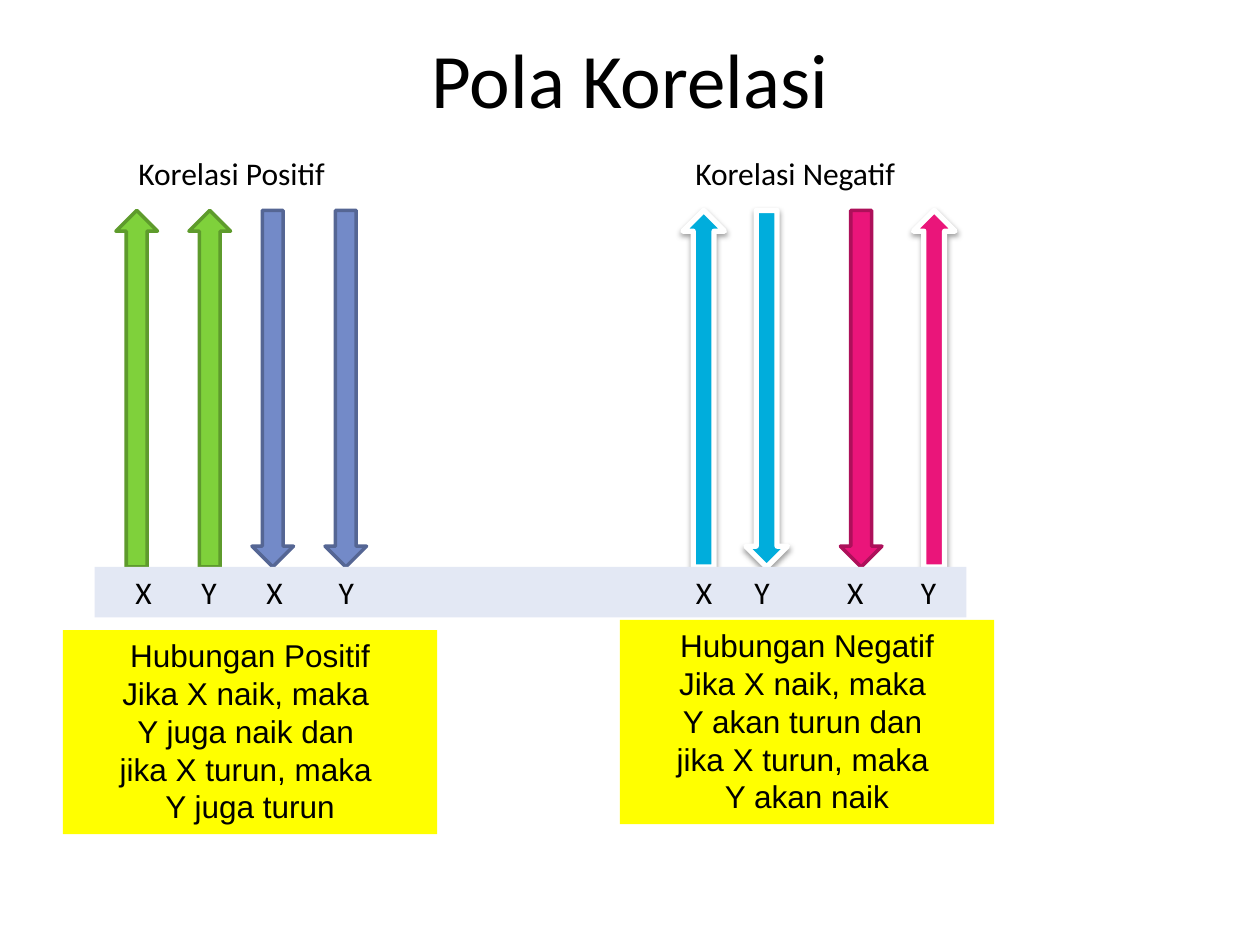
from dataclasses import dataclass

from lxml.etree import SubElement
from pptx import Presentation
from pptx.dml.color import RGBColor
from pptx.enum.shapes import MSO_SHAPE
from pptx.enum.text import MSO_ANCHOR, MSO_AUTO_SIZE, PP_ALIGN
from pptx.oxml.ns import qn
from pptx.util import Inches, Pt


@dataclass(frozen=True)
class Theme:
    heading_font: str = "Calibri"
    note_font: str = "Arial"
    title_size: int = 44
    text_size: int = 18
    ink: str = "000000"
    white: str = "FFFFFF"
    green: str = "7FD13B"
    green_edge: str = "5E9B2C"
    blue: str = "738AC8"
    blue_edge: str = "556694"
    cyan: str = "00ADDC"
    pink: str = "EA157A"
    pink_edge: str = "AD105A"
    band: str = "E3E8F4"
    note: str = "FFFF00"


class SlideBuilder:
    def __init__(self, page, theme):
        self.page = page
        self.theme = theme

    def format(self, para, font, size, align):
        para.alignment = align
        para.font.name = font
        para.font.size = Pt(size)
        para.font.color.rgb = RGBColor.from_string(self.theme.ink)

    def title(self, text, left, top, width, height):
        box = self.page.shapes.title
        box.left, box.top = Inches(left), Inches(top)
        box.width, box.height = Inches(width), Inches(height)
        box.text_frame.text = text
        box.text_frame.vertical_anchor = MSO_ANCHOR.MIDDLE
        self.format(box.text_frame.paragraphs[0], self.theme.heading_font,
                    self.theme.title_size, PP_ALIGN.CENTER)

    def text(self, lines, left, top, width, height, font, align=PP_ALIGN.LEFT,
             fill=None, tabs=()):
        box = self.page.shapes.add_textbox(Inches(left), Inches(top),
                                           Inches(width), Inches(height))
        if fill:
            box.fill.solid()
            box.fill.fore_color.rgb = RGBColor.from_string(fill)
        frame = box.text_frame
        frame.word_wrap = True
        frame.auto_size = MSO_AUTO_SIZE.SHAPE_TO_FIT_TEXT
        frame.text = "\n".join(lines)
        for para in frame.paragraphs:
            if tabs:
                self.tab_stops(para, tabs)
            self.format(para, font, self.theme.text_size, align)

    def tab_stops(self, para, positions):
        stops = SubElement(para._p.get_or_add_pPr(), qn("a:tabLst"))
        for position in positions:
            SubElement(stops, qn("a:tab"), pos=str(Inches(position)), algn="ctr")

    def arrow(self, kind, left, fill, edge):
        raised = edge == self.theme.white
        arrow = self.page.shapes.add_shape(kind, Inches(left), Inches(1.67),
                                           Inches(0.33), Inches(2.83))
        arrow.shadow.inherit = False
        arrow.fill.solid()
        arrow.fill.fore_color.rgb = RGBColor.from_string(fill)
        arrow.line.color.rgb = RGBColor.from_string(edge)
        arrow.line.width = Pt(3 if raised else 2)
        if raised:
            self.drop_shadow(arrow)

    def drop_shadow(self, shape):
        effects = shape._element.spPr.find(qn("a:effectLst"))
        shadow = SubElement(effects, qn("a:outerShdw"), blurRad=str(Pt(3.1)),
                            dist=str(Pt(1.6)), dir="5400000", rotWithShape="0")
        color = SubElement(shadow, qn("a:srgbClr"), val=self.theme.ink)
        SubElement(color, qn("a:alpha"), val="38000")


def main():
    theme = Theme()
    deck = Presentation()
    deck.slide_width, deck.slide_height = Inches(10), Inches(7.5)
    builder = SlideBuilder(deck.slides.add_slide(deck.slide_layouts[5]), theme)

    builder.title("Pola Korelasi", 0.5, 0.33, 9, 0.58)

    up, down = MSO_SHAPE.UP_ARROW, MSO_SHAPE.DOWN_ARROW
    for kind, left, fill, edge in (
        (up, 0.92, theme.green, theme.green_edge),
        (up, 1.5, theme.green, theme.green_edge),
        (down, 2, theme.blue, theme.blue_edge),
        (down, 2.58, theme.blue, theme.blue_edge),
        (up, 5.42, theme.cyan, theme.white),
        (down, 5.92, theme.cyan, theme.white),
        (down, 6.67, theme.pink, theme.pink_edge),
        (up, 7.25, theme.pink, theme.white),
    ):
        builder.arrow(kind, left, fill, edge)

    for heading, left in (("Korelasi Positif", 1), ("Korelasi Negatif", 5.42)):
        builder.text([heading], left, 1.17, 2.17, 0.4, theme.heading_font)

    builder.text(["\tX\tY" * 4], 0.75, 4.5, 6.92, 0.4, theme.heading_font,
                 fill=theme.band,
                 tabs=(0.29, 0.81, 1.33, 1.9, 4.74, 5.2, 5.94, 6.52))

    for name, rising, falling, left, top in (
        ("Positif", "juga naik", "juga turun", 0.5, 5),
        ("Negatif", "akan turun", "akan naik", 4.92, 4.92),
    ):
        lines = [f"Hubungan {name}", "Jika X naik, maka ", f"Y {rising} dan ",
                 "jika X turun, maka ", f"Y {falling}"]
        builder.text(lines, left, top, 2.97, 1.62, theme.note_font,
                     PP_ALIGN.CENTER, theme.note)

    deck.save("out.pptx")


if __name__ == "__main__":
    main()
